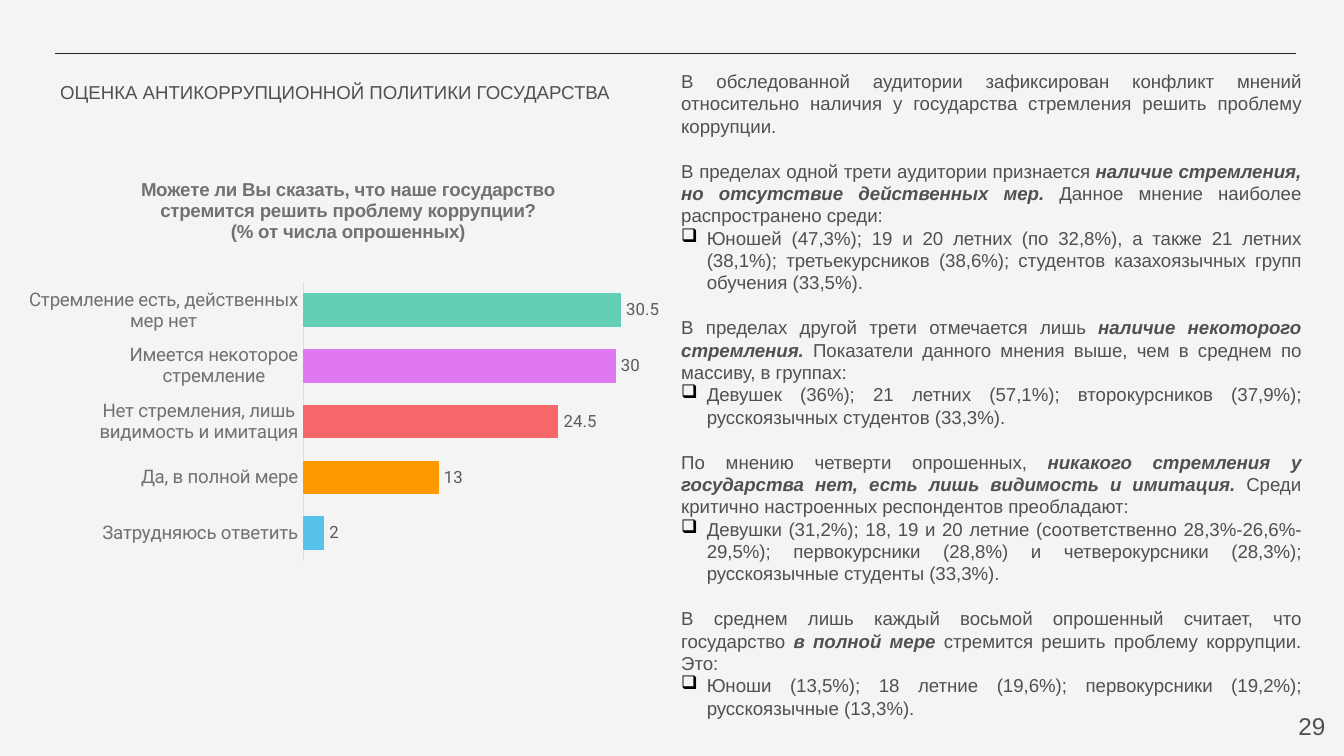
import pptx
import pptx.chart.data
import pptx.dml.color
import pptx.enum.chart
import pptx.enum.shapes
import pptx.enum.text
import pptx.oxml
import pptx.oxml.ns
import pptx.util
from lxml import etree
from pptx.util import Inches, Pt

COLORS = {
    "background": "F4F4F4", "rule": "242424", "text": "505050", "bullet": "000000",
    "axis_text": "717171", "axis_line": "DEDEDE", "label": "5B5B5B",
}
ANSWERS = [
    ("Затрудняюсь ответить", 2, "57C2EC"),
    ("Да, в полной мере", 13, "FF9900"),
    ("Нет стремления, лишь видимость и имитация", 24.5, "F7686B"),
    ("Имеется некоторое стремление", 30, "E078F1"),
    ("Стремление есть, действенных мер нет", 30.5, "62CFB5"),
]
CHART_TITLE = [
    "Можете ли Вы сказать, что наше государство",
    "стремится решить проблему коррупции?",
    "(% от числа опрошенных)",
]
INTRO = ("В обследованной аудитории зафиксирован конфликт мнений относительно "
         "наличия у государства стремления решить проблему коррупции.")
# Lead-in, emphasised words, continuation, bullet
FINDINGS = [
    ("В пределах одной трети аудитории признается ",
     "наличие стремления, но отсутствие действенных мер.",
     " Данное мнение наиболее распространено среди:",
     "Юношей (47,3%); 19 и 20 летних (по 32,8%), а также 21 летних (38,1%); "
     "третьекурсников (38,6%); студентов казахоязычных групп обучения (33,5%)."),
    ("В пределах другой трети отмечается лишь ",
     "наличие некоторого стремления. ",
     "Показатели данного мнения выше, чем в среднем по массиву, в группах:",
     "Девушек (36%); 21 летних (57,1%); второкурсников (37,9%); "
     "русскоязычных студентов (33,3%)."),
    ("По мнению четверти опрошенных, ",
     "никакого стремления у государства нет, есть лишь видимость и имитация. ",
     "Среди критично настроенных респондентов преобладают:",
     "Девушки (31,2%); 18, 19 и 20 летние (соответственно 28,3%-26,6%-29,5%); "
     "первокурсники (28,8%) и четверокурсники (28,3%); русскоязычные студенты (33,3%)."),
    ("В среднем лишь каждый восьмой опрошенный считает, что государство ",
     "в полной мере ",
     "стремится решить проблему коррупции. Это:",
     "Юноши (13,5%); 18 летние (19,6%); первокурсники (19,2%); русскоязычные (13,3%)."),
]


def rgb(name):
    return pptx.dml.color.RGBColor.from_string(COLORS[name])


def style(font, size, color, name="Arial"):
    font.size = Pt(size)
    font.name = name
    font.color.rgb = rgb(color)


def add_rule(s):
    line = s.shapes.add_connector(pptx.enum.shapes.MSO_CONNECTOR.STRAIGHT,
                                  Inches(0.41), Inches(0.4), Inches(9.64), Inches(0.4))
    line.line.color.rgb = rgb("rule")
    line.line.width = Pt(0.75)
    etree.SubElement(line._element.spPr, pptx.oxml.ns.qn("a:effectLst"))


def add_text_frame(s, left, top, width, height):
    tf = s.shapes.add_textbox(Inches(left), Inches(top), Inches(width), Inches(height)).text_frame
    tf.word_wrap = True
    tf.margin_left = tf.margin_right = tf.margin_top = tf.margin_bottom = Inches(0.1)
    return tf


def add_label(s, text, box, size, align):
    p = add_text_frame(s, *box).paragraphs[0]
    p.text = text
    p.alignment = align
    style(p.font, size, "text")


def format_body(p):
    p.alignment = pptx.enum.text.PP_ALIGN.JUSTIFY
    p.line_spacing = Pt(12)
    style(p.font, 10, "text")


def add_bullet(p):
    pPr = p._p.get_or_add_pPr()
    pPr.set("marL", str(Inches(0.19)))
    pPr.set("indent", str(-Inches(0.19)))
    color = pptx.oxml.parse_xml(
        f'<a:buClr {pptx.oxml.ns.nsdecls("a")}><a:srgbClr val="{COLORS["bullet"]}"/></a:buClr>')
    char = pptx.oxml.parse_xml(f'<a:buChar {pptx.oxml.ns.nsdecls("a")} char="❑"/>')
    defaults = pPr.find(pptx.oxml.ns.qn("a:defRPr"))
    defaults.addprevious(color)
    defaults.addprevious(char)


def add_findings(s):
    tf = add_text_frame(s, 4.97, 0.42, 4.81, 5.09)
    tf.paragraphs[0].text = INTRO
    format_body(tf.paragraphs[0])
    for lead, emphasis, rest, groups in FINDINGS:
        p = tf.add_paragraph()
        format_body(p)
        p.space_before = Pt(12)
        for text in (lead, emphasis, rest):
            r = p.add_run()
            r.text = text
            if text == emphasis:
                r.font.bold = r.font.italic = True
        p = tf.add_paragraph()
        p.text = groups
        format_body(p)
        add_bullet(p)


def set_layout(parent, inner=False, **fractions):
    """Place a chart title or plot area by fractions of the chart's size."""
    for old in parent.findall(pptx.oxml.ns.qn("c:layout")):
        parent.remove(old)
    target = '<c:layoutTarget val="inner"/>' if inner else ""
    modes = "".join(f'<c:{k}Mode val="edge"/>' for k in ("x", "y"))
    values = "".join(f'<c:{k} val="{v}"/>' for k, v in fractions.items())
    layout = pptx.oxml.parse_xml(
        f'<c:layout {pptx.oxml.ns.nsdecls("c")}><c:manualLayout>{target}{modes}{values}'
        '</c:manualLayout></c:layout>')
    text = parent.find(pptx.oxml.ns.qn("c:tx"))
    if text is None:
        parent.insert(0, layout)
    else:
        text.addnext(layout)


def add_title(chart):
    chart.has_title = True
    tf = chart.chart_title.text_frame
    for i, text in enumerate(CHART_TITLE):
        p = tf.add_paragraph() if i else tf.paragraphs[0]
        r = p.add_run()
        r.text = text
        for font in (p.font, r.font):
            style(font, 10, "axis_text")
            font.bold = True
    chart.chart_title.include_in_layout = False
    set_layout(chart.chart_title._element, x=0.17, y=0.04)


def add_answers_chart(s):
    data = pptx.chart.data.CategoryChartData()
    data.categories = [name for name, _, _ in ANSWERS]
    data.add_series("Series 1", [value for _, value, _ in ANSWERS])
    chart = s.shapes.add_chart(pptx.enum.chart.XL_CHART_TYPE.BAR_CLUSTERED, Inches(0.21),
                               Inches(1.17), Inches(4.76), Inches(3.01), data).chart
    style(chart.font, 10, "rule")
    chart.has_legend = False
    add_title(chart)
    set_layout(chart._chartSpace.chart.plotArea, inner=True, x=0.43, y=0.31, w=0.57, h=0.69)

    axis = chart.category_axis
    axis.major_tick_mark = pptx.enum.chart.XL_TICK_MARK.NONE
    axis.format.line.color.rgb = rgb("axis_line")
    axis.format.line.width = Pt(0.75)
    style(axis.tick_labels.font, 10, "axis_text", "Roboto")
    chart.value_axis.visible = False
    chart.value_axis.has_major_gridlines = False
    chart.value_axis.minimum_scale = 0
    chart.value_axis.maximum_scale = 35

    plot = chart.plots[0]
    plot.gap_width = 66
    plot.vary_by_categories = False
    for i, (_, _, color) in enumerate(ANSWERS):
        fill = plot.series[0].points[i].format.fill
        fill.solid()
        fill.fore_color.rgb = pptx.dml.color.RGBColor.from_string(color)
    labels = plot.series[0].data_labels
    labels.show_value = True
    labels.position = pptx.enum.chart.XL_LABEL_POSITION.OUTSIDE_END
    style(labels.font, 9, "label", "Roboto")


def main():
    prs = pptx.Presentation()
    prs.slide_width = Inches(10)
    prs.slide_height = prs.slide_width * 9 // 16
    s = prs.slides.add_slide(prs.slide_layouts[6])
    s.background.fill.solid()
    s.background.fill.fore_color.rgb = rgb("background")
    align = pptx.enum.text.PP_ALIGN
    add_rule(s)
    add_label(s, "29", (9.36, 5.19, 0.6, 0.43), 13, align.RIGHT)
    add_findings(s)
    add_label(s, "ОЦЕНКА АНТИКОРРУПЦИОННОЙ ПОЛИТИКИ ГОСУДАРСТВА",
              (0.35, 0.52, 4.44, 0.37), 10, align.LEFT)
    add_answers_chart(s)
    prs.save("out.pptx")


if __name__ == "__main__":
    main()
